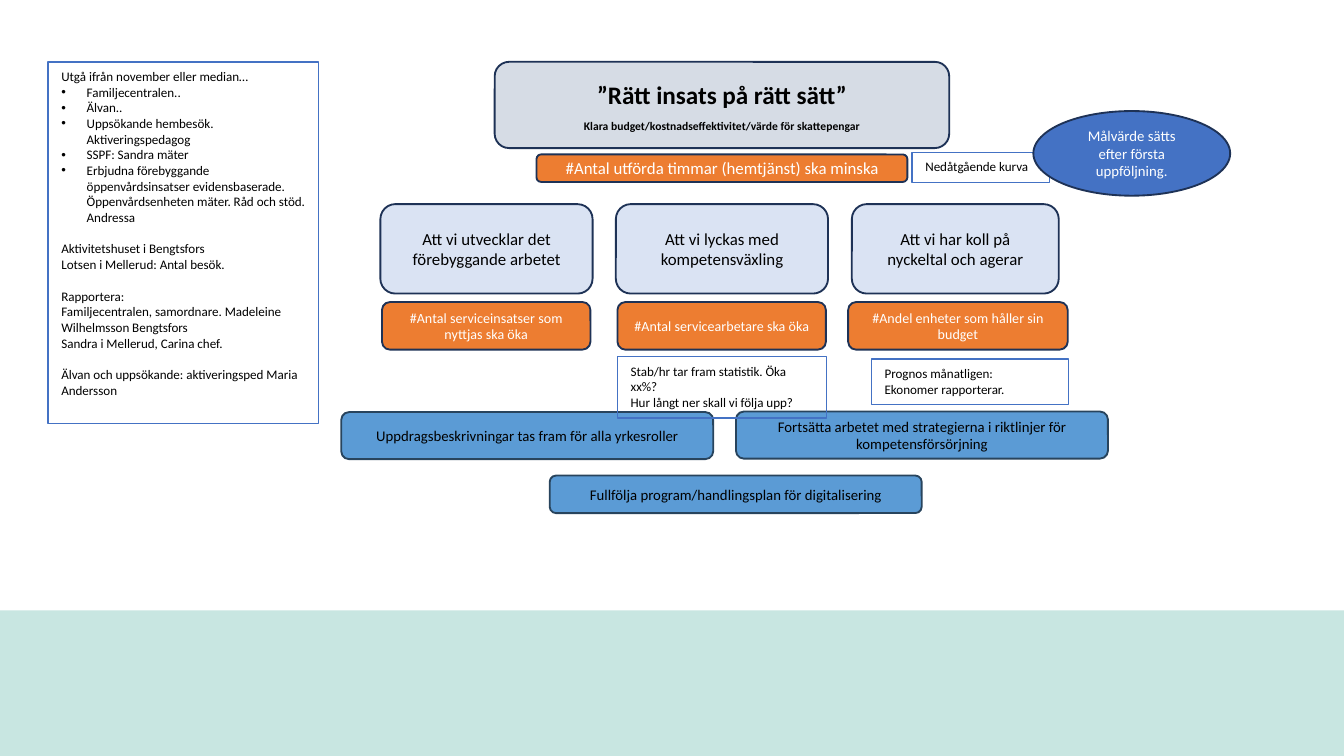
from lxml.etree import SubElement
from pptx import Presentation
from pptx.dml.color import RGBColor
from pptx.enum.shapes import MSO_SHAPE
from pptx.enum.text import MSO_ANCHOR, PP_ALIGN
from pptx.oxml.ns import qn
from pptx.util import Cm, Pt

COLOURS = {
    "black": "000000",
    "white": "FFFFFF",
    "band": "C8E6E1",
    "title": "D6DCE5",
    "goal": "DAE3F3",
    "measure": "ED7D31",
    "strategy": "5B9BD5",
    "accent": "4472C4",
    "navy": "1E3256",
    "slate": "28445D",
}


def colour(name):
    return RGBColor.from_string(COLOURS[name])


class GoalPage:
    font_name = "Calibri"
    note_size = 7
    note_gap = 8.5
    bullet_indent = Cm(0.48)

    def __init__(self, page):
        self.page = page

    def shape(self, kind, place, fill=None, line=None, width=1):
        """Add a preset shape; place is left, top, width, height in cm."""
        box = self.page.shapes.add_shape(kind, *[Cm(length) for length in place])
        box.shadow.inherit = False
        for part, name in ((box.fill, fill), (box.line.fill, line)):
            if name:
                part.solid()
                part.fore_color.rgb = colour(name)
            else:
                part.background()
        if line:
            box.line.width = Pt(width)
        box.text_frame.word_wrap = True
        return box

    def style(self, para, size, ink="black", bold=False, align=PP_ALIGN.CENTER):
        para.alignment = align
        para.font.name = self.font_name
        para.font.size = Pt(size)
        para.font.bold = bold
        para.font.color.rgb = colour(ink)

    def label(self, place, text, fill, size, line="navy", ink="black",
              kind=MSO_SHAPE.ROUNDED_RECTANGLE):
        box = self.shape(kind, place, fill, line)
        box.text_frame.vertical_anchor = MSO_ANCHOR.MIDDLE
        para = box.text_frame.paragraphs[0]
        para.text = text
        self.style(para, size, ink)

    def title(self, place, lines):
        box = self.shape(MSO_SHAPE.ROUNDED_RECTANGLE, place, "title", "navy")
        frame = box.text_frame
        frame.vertical_anchor = MSO_ANCHOR.MIDDLE
        for index, (text, size) in enumerate(lines):
            para = frame.add_paragraph() if index else frame.paragraphs[0]
            para.text = text
            para.line_spacing = 1.07
            para.space_after = Pt(4.5)
            self.style(para, size, bold=True)

    def bullet(self, para):
        properties = para._p.get_or_add_pPr()
        properties.set("marL", str(self.bullet_indent))
        properties.set("indent", str(-self.bullet_indent))
        SubElement(properties, qn("a:buFont"), typeface="Arial")
        SubElement(properties, qn("a:buChar"), char="•")

    def note(self, place, groups):
        """Add an outlined note; groups are (bulleted, gap before, lines)."""
        box = self.shape(MSO_SHAPE.RECTANGLE, place, line="accent", width=0.75)
        frame = box.text_frame
        frame.vertical_anchor = MSO_ANCHOR.TOP
        para = None
        for bulleted, gap, lines in groups:
            for index, text in enumerate(lines):
                para = frame.add_paragraph() if para else frame.paragraphs[0]
                para.text = text
                if bulleted:
                    self.bullet(para)
                if gap and index == 0:
                    para.space_before = Pt(self.note_gap)
                self.style(para, self.note_size, align=PP_ALIGN.LEFT)


def main():
    deck = Presentation()
    deck.slide_width, deck.slide_height = Cm(25.4), Cm(14.29)
    page = GoalPage(deck.slides.add_slide(deck.slide_layouts[6]))

    page.shape(MSO_SHAPE.RECTANGLE, (0, 11.54, 25.4, 2.75), "band")
    page.title((9.35, 1.17, 8.59, 1.63), [
        ("”Rätt insats på rätt sätt”", 13.5),
        ("Klara budget/kostnadseffektivitet/värde för skattepengar", 6.2),
    ])

    goals = [
        (7.19, 4.01, "Att vi utvecklar det förebyggande arbetet"),
        (11.64, 4.01, "Att vi lyckas med kompetensväxling"),
        (16.1, 3.91, "Att vi har koll på nyckeltal och agerar"),
    ]
    for left, width, text in goals:
        page.label((left, 3.86, width, 1.69), text, "goal", 9)

    page.label((10.14, 2.92, 7.01, 0.52),
               "#Antal utförda timmar (hemtjänst) ska minska",
               "measure", 9, ink="white")
    measures = [
        (7.22, 3.94, "#Antal serviceinsatser som nyttjas ska öka"),
        (11.67, 3.94, "#Antal servicearbetare ska öka"),
        (16.03, 4.15, "#Andel enheter som håller sin budget"),
    ]
    for left, width, text in measures:
        page.label((left, 5.71, width, 0.9), text, "measure", 7.5, ink="white")

    strategies = [
        (6.45, 7.79, 0.89, "Uppdragsbeskrivningar tas fram för alla yrkesroller"),
        (10.39, 8.99, 0.71, "Fullfölja program/handlingsplan för digitalisering"),
        (13.91, 7.78, 0.89, "Fortsätta arbetet med strategierna i riktlinjer för "
                            "kompetensförsörjning"),
    ]
    for left, top, height, text in strategies:
        page.label((left, top, 7.03, height), text, "strategy", 7.9, "slate")

    page.note((0.91, 1.17, 5.11, 6.84), [
        (False, False, ["Utgå ifrån november eller median…"]),
        (True, False, [
            "Familjecentralen..",
            "Älvan..",
            "Uppsökande hembesök. Aktiveringspedagog",
            "SSPF: Sandra mäter",
            "Erbjudna förebyggande öppenvårdsinsatser evidensbaserade. "
            "Öppenvårdsenheten mäter. Råd och stöd. Andressa",
        ]),
        (False, True, ["Aktivitetshuset i Bengtsfors",
                       "Lotsen i Mellerud: Antal besök."]),
        (False, True, [
            "Rapportera:",
            "Familjecentralen, samordnare. Madeleine Wilhelmsson Bengtsfors",
            "Sandra i Mellerud, Carina chef.",
        ]),
        (False, True, ["Älvan och uppsökande: aktiveringsped Maria Andersson"]),
    ])
    short_notes = [
        ((17.24, 2.88, 2.6, 0.57), ["Nedåtgående kurva"]),
        ((11.67, 6.74, 3.95, 1.16), ["Stab/hr tar fram statistik. Öka xx%?",
                                     "Hur långt ner skall vi följa upp?"]),
        ((16.47, 6.79, 3.72, 0.86), ["Prognos månatligen:",
                                     "Ekonomer rapporterar."]),
    ]
    for place, lines in short_notes:
        page.note(place, [(False, False, lines)])

    page.label((19.53, 2.1, 3.72, 1.6), "Målvärde sätts efter första uppföljning.",
               "accent", 7.9, ink="white", kind=MSO_SHAPE.OVAL)
    deck.save("out.pptx")


if __name__ == "__main__":
    main()
